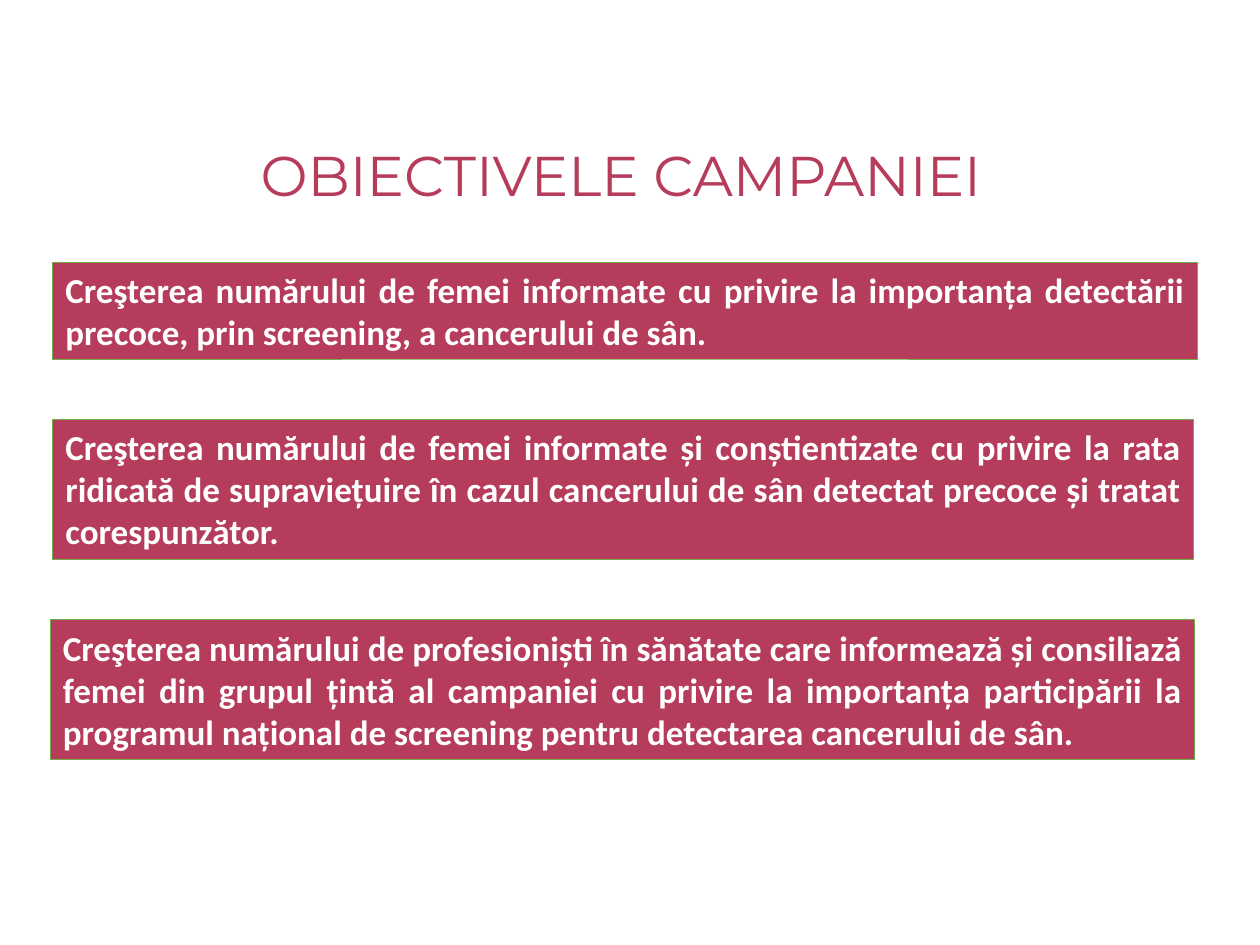
from dataclasses import dataclass

from pptx import Presentation
from pptx.dml.color import RGBColor
from pptx.enum.shapes import MSO_SHAPE
from pptx.enum.text import MSO_ANCHOR, PP_ALIGN
from pptx.slide import Slide
from pptx.text.text import TextFrame
from pptx.util import Inches, Pt

RASPBERRY, GREEN, WHITE = "B63C5C", "70AD47", "FFFFFF"
TITLE_FONT = {"name": "Montserrat", "size": Pt(32), "bold": False}
OBJECTIVE_FONT = {"name": "Calibri", "size": Pt(20), "bold": True}


@dataclass
class Objective:
    left: float
    top: float
    width: float
    height: float
    text: str


OBJECTIVES = [
    Objective(0.42, 2.08, 9.08, 0.77,
              "Creşterea numărului de femei informate cu privire la importanța "
              "detectării precoce, prin screening, a cancerului de sân."),
    Objective(0.42, 3.33, 9.05, 1.11,
              "Creşterea numărului de femei informate și conștientizate cu privire "
              "la rata ridicată de supraviețuire în cazul cancerului de sân detectat "
              "precoce și tratat corespunzător."),
    Objective(0.4, 4.92, 9.08, 1.11,
              "Creşterea numărului de profesioniști în sănătate care informează și "
              "consiliază femei din grupul țintă al campaniei cu privire la importanța "
              "participării la programul național de screening pentru detectarea "
              "cancerului de sân."),
]


def rgb(color: str) -> RGBColor:
    return RGBColor.from_string(color)


def write(tf: TextFrame, text: str, font: dict, color: str, align: PP_ALIGN) -> None:
    tf.word_wrap = True
    tf.vertical_anchor = MSO_ANCHOR.TOP
    p = tf.paragraphs[0]
    p.alignment = align
    r = p.add_run()
    r.text = text
    for name, value in font.items():
        setattr(r.font, name, value)
    r.font.color.rgb = rgb(color)


def add_title(s: Slide, text: str) -> None:
    box = s.shapes.add_textbox(Inches(1.18), Inches(1.13), Inches(7.5), Inches(0.67))
    write(box.text_frame, text, TITLE_FONT, RASPBERRY, PP_ALIGN.CENTER)
    box.text_frame.paragraphs[0].line_spacing = 0.9


def add_objective(s: Slide, item: Objective) -> None:
    sp = s.shapes.add_shape(MSO_SHAPE.RECTANGLE, Inches(item.left), Inches(item.top),
                            Inches(item.width), Inches(item.height))
    sp.shadow.inherit = False
    sp.fill.solid()
    sp.fill.fore_color.rgb = rgb(RASPBERRY)
    sp.line.color.rgb = rgb(GREEN)
    sp.line.width = Pt(0.5)
    write(sp.text_frame, item.text, OBJECTIVE_FONT, WHITE, PP_ALIGN.JUSTIFY)


def main() -> None:
    """Build the campaign objectives slide."""
    prs = Presentation()
    prs.slide_width, prs.slide_height = Inches(10), Inches(7.5)
    s = prs.slides.add_slide(prs.slide_layouts[6])
    add_title(s, "OBIECTIVELE CAMPANIEI")
    for item in OBJECTIVES:
        add_objective(s, item)
    prs.save("out.pptx")


if __name__ == "__main__":
    main()
